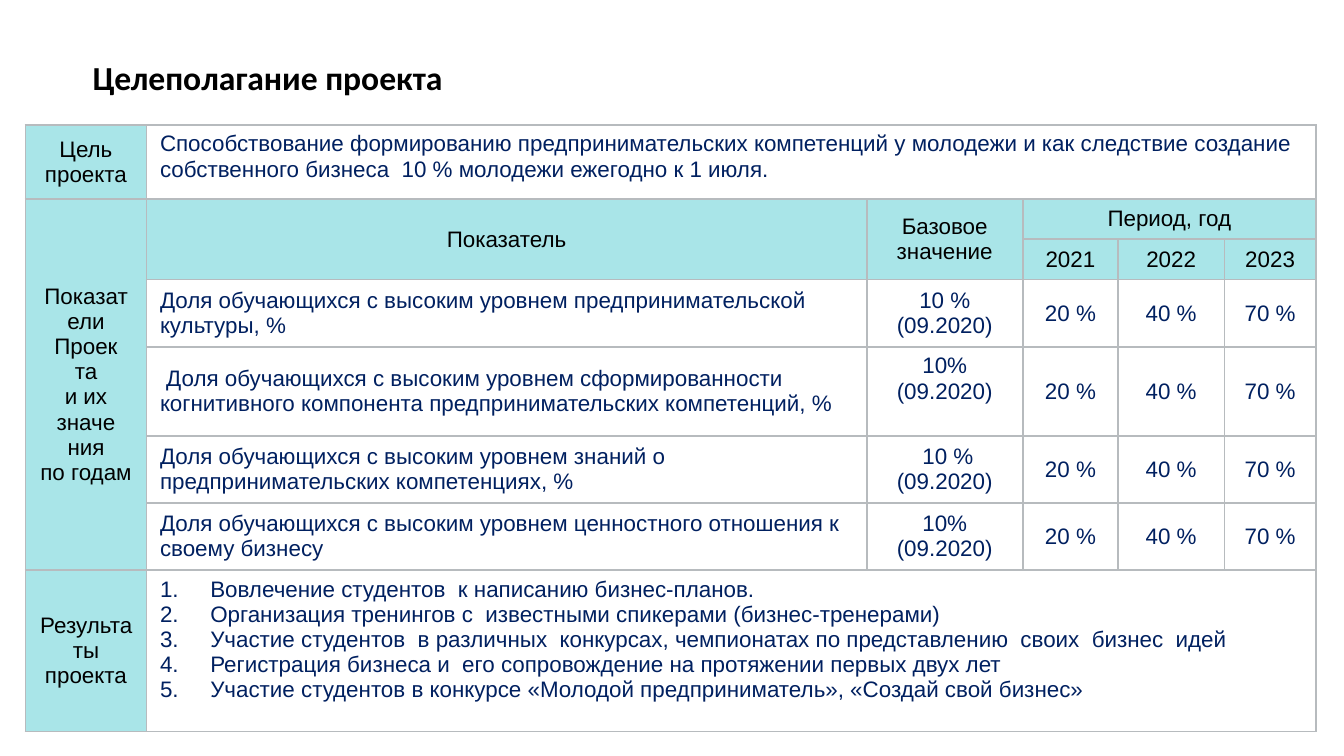
"""Build the slide with the goals, yearly indicators and results of the project."""
from dataclasses import dataclass

import lxml.etree
import pptx
import pptx.dml.color
import pptx.enum.text
import pptx.oxml.ns
import pptx.slide
import pptx.table
import pptx.text.text
import pptx.util

Cm = pptx.util.Cm
Pt = pptx.util.Pt
Align = pptx.enum.text.PP_ALIGN
Anchor = pptx.enum.text.MSO_ANCHOR
qn = pptx.oxml.ns.qn

BLACK = pptx.dml.color.RGBColor(0x00, 0x00, 0x00)
NAVY = pptx.dml.color.RGBColor(0x00, 0x20, 0x60)
WHITE = pptx.dml.color.RGBColor(0xFF, 0xFF, 0xFF)
AQUA = pptx.dml.color.RGBColor(0xA9, 0xE5, 0xE8)
GREY = pptx.dml.color.RGBColor(0xB7, 0xBB, 0xBE)

COLUMN_WIDTHS = [2.29, 13.61, 2.95, 1.8, 2.01, 1.73]
ROW_HEIGHTS = [1.4, 0.71, 0.71, 1.19, 1.68, 1.19, 1.19, 3.05]
YEARS = ["2021", "2022", "2023"]
TARGETS = ["20 %", "40 %", "70 %"]


@dataclass
class Block:
    """Text of one cell, with the rows and columns that it spans."""

    row: int
    column: int
    lines: list[str]
    rows: int = 1
    columns: int = 1
    header: bool = False
    align: Align = Align.CENTER
    anchor: Anchor = Anchor.MIDDLE
    numbered: bool = False


@dataclass
class Indicator:
    """Indicator name and its base value."""

    name: str
    base: str
    base_anchor: Anchor = Anchor.MIDDLE


INDICATORS = [
    Indicator("Доля обучающихся с высоким уровнем предпринимательской культуры, %", "10 %"),
    Indicator(
        " Доля обучающихся с высоким уровнем сформированности когнитивного "
        "компонента предпринимательских компетенций, %",
        "10%",
        Anchor.TOP,
    ),
    Indicator(
        "Доля обучающихся с высоким уровнем знаний о предпринимательских компетенциях, %",
        " 10 %",
    ),
    Indicator("Доля обучающихся с высоким уровнем ценностного отношения к своему бизнесу", "10%"),
]
GOAL = (
    "Способствование формированию предпринимательских компетенций у молодежи и как "
    "следствие создание собственного бизнеса  10 % молодежи ежегодно к 1 июля."
)
RESULTS = [
    "Вовлечение студентов  к написанию бизнес-планов.",
    "Организация тренингов с  известными спикерами (бизнес-тренерами)",
    "Участие студентов  в различных  конкурсах, чемпионатах по представлению  своих  бизнес  идей",
    "Регистрация бизнеса и  его сопровождение на протяжении первых двух лет",
    "Участие студентов в конкурсе «Молодой предприниматель», «Создай свой бизнес»",
]
INDICATOR_LABEL = ["Показатели", "Проек", "та", "и их значе", "ния", "по годам"]


def list_blocks() -> list[Block]:
    """Return every cell of the table that holds text."""
    blocks = [
        Block(0, 0, ["Цель проекта"], header=True),
        Block(0, 1, [GOAL], columns=5, align=Align.LEFT, anchor=Anchor.TOP),
        Block(1, 0, INDICATOR_LABEL, rows=6, header=True),
        Block(1, 1, ["Показатель"], rows=2, header=True),
        Block(1, 2, ["Базовое", "значение"], rows=2, header=True),
        Block(1, 3, ["Период, год"], columns=3, header=True),
        Block(7, 0, ["Результаты", "проекта"], header=True),
        Block(7, 1, RESULTS, columns=5, align=Align.JUSTIFY, anchor=Anchor.TOP, numbered=True),
    ]
    blocks += [Block(2, column, [year], header=True) for column, year in enumerate(YEARS, 3)]
    for row, indicator in enumerate(INDICATORS, 3):
        blocks.append(Block(row, 1, [indicator.name], align=Align.LEFT))
        blocks.append(Block(row, 2, [indicator.base, "(09.2020)"], anchor=indicator.base_anchor))
        blocks += [Block(row, column, [target]) for column, target in enumerate(TARGETS, 3)]
    return blocks


def set_borders(cell: pptx.table._Cell) -> None:
    """Outline all four sides of a cell."""
    properties = cell._tc.get_or_add_tcPr()
    for index, side in enumerate(("a:lnL", "a:lnR", "a:lnT", "a:lnB")):
        line = lxml.etree.Element(qn(side), w=str(Pt(1)))
        fill = lxml.etree.SubElement(line, qn("a:solidFill"))
        lxml.etree.SubElement(fill, qn("a:srgbClr"), val=str(GREY))
        properties.insert(index, line)


def add_number(paragraph: pptx.text.text._Paragraph) -> None:
    """Number a paragraph with a hanging indent."""
    properties = paragraph._p.get_or_add_pPr()
    properties.set("marL", str(Cm(0.95)))
    properties.set("indent", str(-Cm(0.95)))
    lxml.etree.SubElement(properties, qn("a:buFont"), typeface="+mj-lt")
    lxml.etree.SubElement(properties, qn("a:buAutoNum"), type="arabicPeriod")


def fill_block(table: pptx.table.Table, block: Block) -> None:
    """Merge, colour and write one block of the table."""
    cell = table.cell(block.row, block.column)
    last_row = block.row + block.rows
    last_column = block.column + block.columns
    if block.rows * block.columns > 1:
        cell.merge(table.cell(last_row - 1, last_column - 1))
    for row in range(block.row, last_row):
        for column in range(block.column, last_column):
            part = table.cell(row, column)
            part.fill.solid()
            part.fill.fore_color.rgb = AQUA if block.header else WHITE
            set_borders(part)
    cell.vertical_anchor = block.anchor
    cell.text_frame.text = "\n".join(block.lines)
    for paragraph in cell.text_frame.paragraphs:
        paragraph.alignment = block.align
        if block.numbered:
            add_number(paragraph)
        set_font(paragraph, "Arial", 12, BLACK if block.header else NAVY)


def set_font(
    paragraph: pptx.text.text._Paragraph,
    name: str,
    size: float,
    color: pptx.dml.color.RGBColor,
    bold: bool = False,
) -> None:
    """Set the font of a whole paragraph."""
    font = paragraph.font
    font.name, font.size, font.bold = name, Pt(size), bold
    font.color.rgb = color


def add_title(page: pptx.slide.Slide, text: str) -> None:
    """Write the slide title."""
    box = page.shapes.add_textbox(Cm(1.75), Cm(1.07), Cm(19.13), Cm(1.9))
    frame = box.text_frame
    frame.word_wrap = True
    frame.margin_left = frame.margin_right = frame.margin_top = frame.margin_bottom = 0
    frame.text = text
    set_font(frame.paragraphs[0], "Calibri", 18, BLACK, bold=True)


def add_goal_table(page: pptx.slide.Slide) -> None:
    """Draw the table of goals, indicators and results."""
    frame = page.shapes.add_table(
        len(ROW_HEIGHTS), len(COLUMN_WIDTHS), Cm(0.48), Cm(2.36),
        Cm(sum(COLUMN_WIDTHS)), Cm(sum(ROW_HEIGHTS)),
    )
    table = frame.table
    table.first_row = table.horz_banding = False
    for column, width in zip(table.columns, COLUMN_WIDTHS):
        column.width = Cm(width)
    for row, height in zip(table.rows, ROW_HEIGHTS):
        row.height = Cm(height)
    for block in list_blocks():
        fill_block(table, block)


def main() -> None:
    """Build and save the deck."""
    deck = pptx.Presentation()
    deck.slide_width, deck.slide_height = Cm(25.4), Cm(14.29)
    page = deck.slides.add_slide(deck.slide_layouts[6])
    add_title(page, "Целеполагание проекта")
    add_goal_table(page)
    deck.save("out.pptx")


if __name__ == "__main__":
    main()
